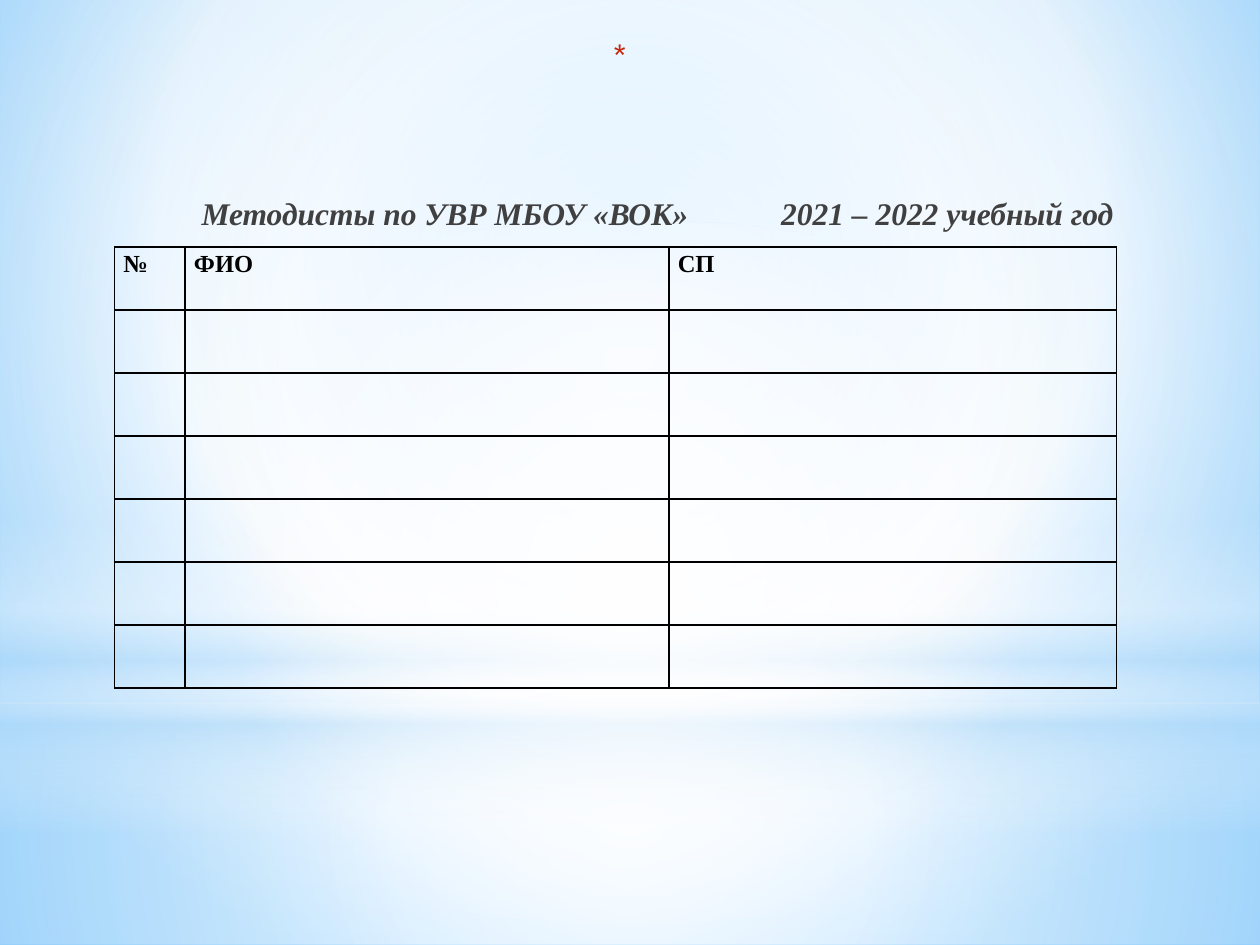
from dataclasses import dataclass

from lxml import etree
from pptx import Presentation
from pptx.dml.color import RGBColor as RGB
from pptx.enum.shapes import MSO_SHAPE as Shape
from pptx.enum.text import PP_ALIGN as Align
from pptx.oxml import parse_xml
from pptx.oxml.ns import qn
from pptx.util import Inches, Pt

NS = 'xmlns:a="http://schemas.openxmlformats.org/drawingml/2006/main"'


@dataclass(frozen=True)
class Theme:
    white: str = "FFFFFF"
    pale: str = "B4DCFA"
    sky: str = "9ED5FF"
    blue: str = "5BB9FF"
    black: str = "000000"
    grey: str = "404040"
    red: str = "C3260C"
    serif: str = "Times New Roman"
    sans: str = "Karla"
    head: int = 18
    cell: int = 14
    star: float = 20.5


T = Theme()
MID = (50, 50, 50, 50)


def grad(stops, focus=None, angle=90):
    """Gradient of (place, colour, opacity) stops: round if focus is given."""
    marks = "".join(
        f'<a:gs pos="{at * 1000}"><a:srgbClr val="{tone}">'
        f'<a:alpha val="{alpha * 1000}"/></a:srgbClr></a:gs>'
        for at, tone, alpha in stops)
    if focus:
        sides = " ".join(f'{side}="{val * 1000}"' for side, val in zip("ltrb", focus))
        kind = f'<a:path path="circle"><a:fillToRect {sides}/></a:path>'
    else:
        kind = f'<a:lin ang="{angle * 60000}" scaled="0"/>'
    return parse_xml(f'<a:gradFill {NS} rotWithShape="1">'
                     f'<a:gsLst>{marks}</a:gsLst>{kind}</a:gradFill>')


def swap(fill, new):
    """Put a gradient in place of a solid fill."""
    fill.getparent().replace(fill, new)


def glow(slide, kind, top, high, stops, focus=None):
    form = slide.shapes.add_shape(kind, 0, Inches(top), Inches(10), Inches(high))
    form.shadow.inherit = False
    form.line.fill.background()
    form.fill.solid()
    swap(form.fill._xPr.find(qn("a:solidFill")), grad(stops, focus))


def write(frame, text, size=T.head, font=T.serif, color=T.black, bold=False,
          italic=False, align=Align.LEFT, space=1.0, tab=None):
    para = frame.paragraphs[0]
    para.alignment, para.line_spacing = align, space
    if tab:
        tabs = etree.SubElement(para._p.get_or_add_pPr(), qn("a:tabLst"))
        etree.SubElement(tabs, qn("a:tab"), pos=str(Inches(tab)), algn="l")
    run = para.add_run()
    run.text = text
    run.font.name, run.font.size = font, Pt(size)
    run.font.bold, run.font.italic = bold, italic
    run.font.color.rgb = RGB.from_string(color)


def label(slide, text, left, top, wide, high, **style):
    box = slide.shapes.add_textbox(*map(Inches, (left, top, wide, high)))
    frame = box.text_frame
    frame.word_wrap = True
    frame.margin_left = frame.margin_right = 0
    frame.margin_top = frame.margin_bottom = 0
    write(frame, text, **style)


def border(cell):
    props = cell._tc.get_or_add_tcPr()
    for spot, side in enumerate("LRTB"):
        props.insert(spot, parse_xml(
            f'<a:ln{side} {NS} w="{Pt(1)}"><a:solidFill>'
            f'<a:srgbClr val="{T.black}"/></a:solidFill></a:ln{side}>'))


def grid(slide, heads, left, top, widths, rows, high):
    table = slide.shapes.add_table(
        rows, len(widths), Inches(left), Inches(top),
        Inches(sum(widths)), Inches(rows * high)).table
    table.first_row = table.horz_banding = False
    for col, wide in zip(table.columns, widths):
        col.width = Inches(wide)
    for row in table.rows:
        row.height = Inches(high)
    for cell in table.iter_cells():
        cell.fill.background()
        cell.margin_left = cell.margin_right = Inches(0.07)
        cell.margin_top = cell.margin_bottom = 0
        border(cell)
    for cell, text in zip(table.rows[0].cells, heads):
        write(cell.text_frame, text, size=T.cell, bold=True, space=1.15)


def backdrop(slide):
    # Sky
    fill = slide.background.fill
    fill.solid()
    swap(fill._xPr.find(qn("a:solidFill")), grad(
        [(0, T.sky, 100), (60, T.white, 100), (100, T.blue, 100)],
        (20, 10, 20, 60)))
    # Lower and upper haze
    for top, high, mid, first, second in ((5.58, 1.92, 37, 91, 76),
                                          (0, 5.58, 48, 89, 62)):
        glow(slide, Shape.RECTANGLE, top, high,
             [(0, T.white, first), (mid, T.white, second), (100, T.pale, 79)], MID)
    # Horizon
    glow(slide, Shape.RECTANGLE, 4.12, 2.5,
         [(0, T.white, 0), (29, T.white, 30), (45, T.pale, 40),
          (55, T.white, 26), (65, T.pale, 60), (100, T.white, 0)])
    # Central light
    glow(slide, Shape.OVAL, 1.75, 5.58, [(0, T.white, 100), (56, T.white, 0)], MID)


def main():
    deck = Presentation()
    deck.slide_width, deck.slide_height = Inches(10), Inches(7.5)
    slide = deck.slides.add_slide(deck.slide_layouts[6])
    backdrop(slide)
    # Heading
    label(slide, "*", 4.72, 0.27, 0.4, 0.35, size=T.star, font=T.sans,
          color=T.red, align=Align.CENTER)
    label(slide, "Методисты по УВР МБОУ «ВОК»\t2021 – 2022 учебный год",
          1.6, 1.54, 7.6, 0.32, color=T.grey, bold=True, italic=True, tab=4.6)
    # Staff table
    grid(slide, ("№", "ФИО", "СП"), 0.91, 1.96, (0.56, 3.84, 3.55), 7, 0.5)
    deck.save("out.pptx")


if __name__ == "__main__":
    main()
